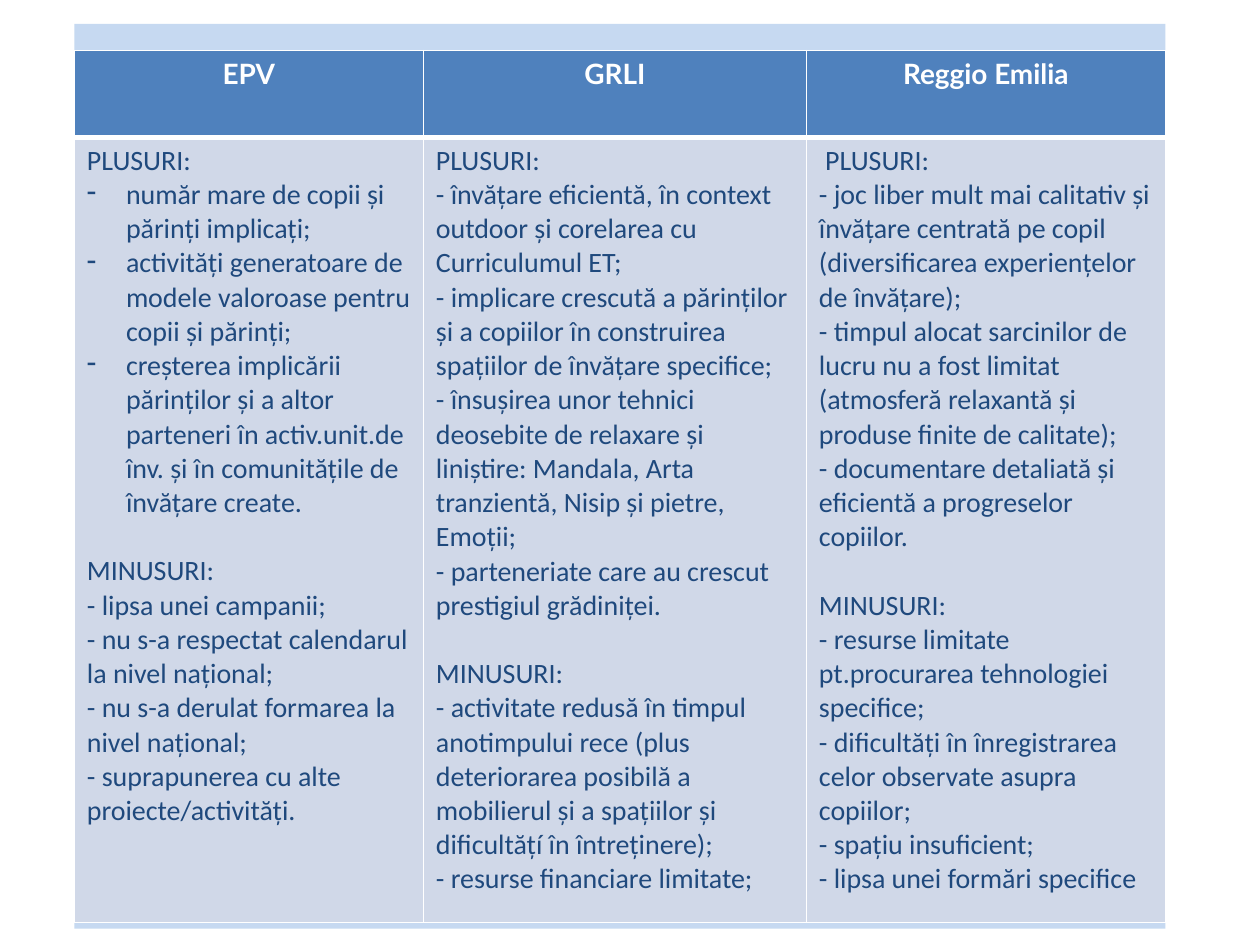
from lxml import etree
from pptx import Presentation
from pptx.dml.color import RGBColor
from pptx.enum.shapes import MSO_SHAPE
from pptx.enum.text import PP_ALIGN
from pptx.oxml.ns import qn
from pptx.util import Inches, Pt

RECTANGLE = MSO_SHAPE.RECTANGLE
LEFT, CENTER = PP_ALIGN.LEFT, PP_ALIGN.CENTER

COLORS = {
    "panel": "C6D9F1",
    "header": "4F81BD",
    "body": "D0D8E8",
    "text": "1F497D",
    "white": "FFFFFF",
}
COLUMN_WIDTHS = [2.77, 3.04, 2.85]
ROW_HEIGHTS = [0.69, 6.23]
SECTION_GAP = 19.5

# Each programme: name, heading and items of the pluses, bulleted or not, minuses
PROGRAMMES = [
    ("EPV", "PLUSURI:", [
        "număr mare de copii și părinți implicați;",
        "activități generatoare de modele valoroase pentru copii și părinți;",
        "creșterea implicării părinților și a altor parteneri în activ.unit.de înv. "
        "și în comunitățile de învățare create.",
    ], True, [
        "- lipsa unei campanii;",
        "- nu s-a respectat calendarul la nivel național;",
        "- nu s-a derulat formarea la nivel național;",
        "- suprapunerea cu alte proiecte/activități.",
    ]),
    ("GRLI", "PLUSURI:", [
        "- învățare eficientă, în context outdoor și corelarea cu Curriculumul ET;",
        "- implicare crescută a părinților și a copiilor în construirea spațiilor "
        "de învățare specifice;",
        "- însușirea unor tehnici deosebite de relaxare și liniștire: Mandala, "
        "Arta tranzientă, Nisip și pietre, Emoții;",
        "- parteneriate care au crescut prestigiul grădiniței.",
    ], False, [
        "- activitate redusă în timpul anotimpului rece (plus deteriorarea posibilă "
        "a mobilierul și a spațiilor și dificultățí în întreținere);",
        "- resurse financiare limitate;",
    ]),
    ("Reggio Emilia", " PLUSURI:", [
        "- joc liber mult mai calitativ și învățare centrată pe copil "
        "(diversificarea experiențelor de învățare);",
        "- timpul alocat sarcinilor de lucru nu a fost limitat "
        "(atmosferă relaxantă și produse finite de calitate);",
        "- documentare detaliată și eficientă a progreselor copiilor.",
    ], False, [
        "- resurse limitate pt.procurarea tehnologiei specifice;",
        "- dificultăți în înregistrarea celor observate asupra copiilor;",
        "- spațiu insuficient;",
        "- lipsa unei formări specifice",
    ]),
]


def rgb(name):
    return RGBColor.from_string(COLORS[name])


def add_text(text_frame, text, font="Calibri", size=16, color="text", bold=False,
             align=LEFT, bullet=None, space_before=0):
    """Write the text as the next paragraph, using the first one while it is empty."""
    paragraph = text_frame.paragraphs[0]
    if paragraph.runs:
        paragraph = text_frame.add_paragraph()
    paragraph.alignment = align
    if space_before:
        paragraph.space_before = Pt(space_before)
    if bullet:
        properties = paragraph._p.get_or_add_pPr()
        properties.set("marL", str(Inches(0.31)))
        properties.set("indent", str(-Inches(0.31)))
        etree.SubElement(properties, qn("a:buChar"), char=bullet)
    run = paragraph.add_run()
    run.text = text
    run.font.name = font
    run.font.size = Pt(size)
    run.font.bold = bold
    run.font.color.rgb = rgb(color)


def style_cell(cell, fill, top=1, bottom=1):
    """Set the white borders, then the fill, in the order the schema asks for."""
    properties = cell._tc.get_or_add_tcPr()
    for tag, width in (("lnL", 1), ("lnR", 1), ("lnT", top), ("lnB", bottom)):
        line = etree.SubElement(properties, qn(f"a:{tag}"), w=str(Pt(width)))
        solid = etree.SubElement(line, qn("a:solidFill"))
        etree.SubElement(solid, qn("a:srgbClr"), val=COLORS["white"])
    cell.fill.solid()
    cell.fill.fore_color.rgb = rgb(fill)


def add_panel(slide, left, top, width, height):
    panel = slide.shapes.add_shape(
        RECTANGLE, Inches(left), Inches(top), Inches(width), Inches(height))
    panel.shadow.inherit = False
    panel.fill.solid()
    panel.fill.fore_color.rgb = rgb("panel")
    panel.line.fill.background()


def fill_body(text_frame, heading, pluses, bulleted, minuses):
    add_text(text_frame, heading)
    for item in pluses:
        add_text(text_frame, item, bullet="-" if bulleted else None)
    add_text(text_frame, "MINUSURI:", space_before=SECTION_GAP)
    for item in minuses:
        add_text(text_frame, item)


def add_comparison_table(slide, left, top, width, height):
    table = slide.shapes.add_table(
        len(ROW_HEIGHTS), len(PROGRAMMES),
        Inches(left), Inches(top), Inches(width), Inches(height)).table
    for column, column_width in zip(table.columns, COLUMN_WIDTHS):
        column.width = Inches(column_width)
    for row, row_height in zip(table.rows, ROW_HEIGHTS):
        row.height = Inches(row_height)
    for index, (name, *content) in enumerate(PROGRAMMES):
        header, body = table.cell(0, index), table.cell(1, index)
        style_cell(header, "header", bottom=3)
        style_cell(body, "body", top=3)
        add_text(header.text_frame, name, font="Lato", color="white", bold=True,
                 align=CENTER)
        fill_body(body.text_frame, *content)


def main():
    presentation = Presentation()
    presentation.slide_width = Inches(10)
    presentation.slide_height = Inches(7.5)
    slide = presentation.slides.add_slide(presentation.slide_layouts[6])
    add_panel(slide, 0.59, 0.19, 8.66, 7.18)
    add_comparison_table(slide, 0.59, 0.4, sum(COLUMN_WIDTHS), sum(ROW_HEIGHTS))
    presentation.save("out.pptx")


if __name__ == "__main__":
    main()
